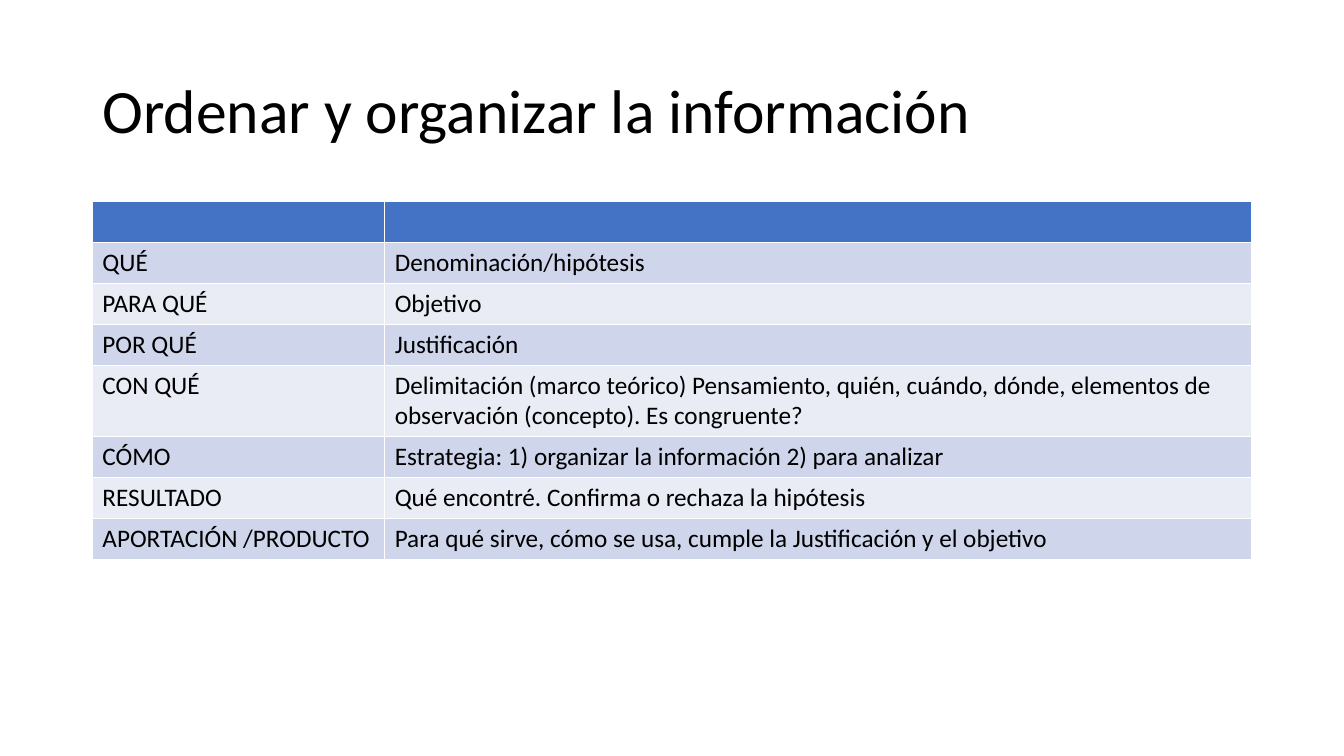
import pptx
import pptx.util
import pptx.dml.color
import pptx.enum.text

Pt = pptx.util.Pt
RGBColor = pptx.dml.color.RGBColor

BLACK = RGBColor(0x00, 0x00, 0x00)
HEADER_BLUE = RGBColor(0x44, 0x72, 0xC4)
BAND_DARK = RGBColor(0xCF, 0xD5, 0xEA)
BAND_LIGHT = RGBColor(0xE9, 0xEB, 0xF5)

LEFT, WIDTH = 66, 828
COLUMN_WIDTHS = (208.8, 619.2)
ROW_HEIGHT, TALL_ROW_HEIGHT = 29.2, 50.4

ROWS = [
    ("", ""),
    ("QUÉ", "Denominación/hipótesis"),
    ("PARA QUÉ", "Objetivo"),
    ("POR QUÉ", "Justificación"),
    ("CON QUÉ", "Delimitación (marco teórico) Pensamiento, quién, cuándo, dónde, "
                "elementos de observación (concepto). Es congruente?"),
    ("CÓMO", "Estrategia: 1) organizar la información 2) para analizar"),
    ("RESULTADO", "Qué encontré. Confirma o rechaza la hipótesis"),
    ("APORTACIÓN /PRODUCTO", "Para qué sirve, cómo se usa, cumple la Justificación y el objetivo"),
]
TALL_ROW = 4


def write_text(tf, text, size=18, color=BLACK, font="Calibri", spacing=None):
    p = tf.paragraphs[0]
    p.alignment = pptx.enum.text.PP_ALIGN.LEFT
    p.line_spacing = spacing
    p.font.size = Pt(size)
    if text:
        r = p.add_run()
        r.text = text
        r.font.size = Pt(size)
        r.font.name = font
        r.font.color.rgb = color


def place_title(slide, text):
    sp = slide.shapes.title
    sp.left, sp.top, sp.width, sp.height = Pt(LEFT), Pt(28.75), Pt(WIDTH), Pt(104.4)
    sp.text_frame.vertical_anchor = pptx.enum.text.MSO_ANCHOR.MIDDLE
    write_text(sp.text_frame, text, size=44, spacing=0.9)


def row_fill(index):
    if index == 0:
        return HEADER_BLUE
    return BAND_DARK if index % 2 else BAND_LIGHT


def add_question_table(slide, rows):
    heights = [TALL_ROW_HEIGHT if i == TALL_ROW else ROW_HEIGHT for i in range(len(rows))]
    table = slide.shapes.add_table(
        len(rows), len(COLUMN_WIDTHS), Pt(LEFT), Pt(144), Pt(WIDTH), Pt(sum(heights))
    ).table
    for column, width in zip(table.columns, COLUMN_WIDTHS):
        column.width = Pt(width)
    for i, texts in enumerate(rows):
        table.rows[i].height = Pt(heights[i])
        for j, text in enumerate(texts):
            cell = table.cell(i, j)
            cell.fill.solid()
            cell.fill.fore_color.rgb = row_fill(i)
            write_text(cell.text_frame, text)


def main():
    prs = pptx.Presentation()
    prs.slide_width, prs.slide_height = Pt(960), Pt(540)
    slide = prs.slides.add_slide(prs.slide_layouts[5])
    place_title(slide, "Ordenar y organizar la información")
    add_question_table(slide, ROWS)
    prs.save("out.pptx")


if __name__ == "__main__":
    main()
